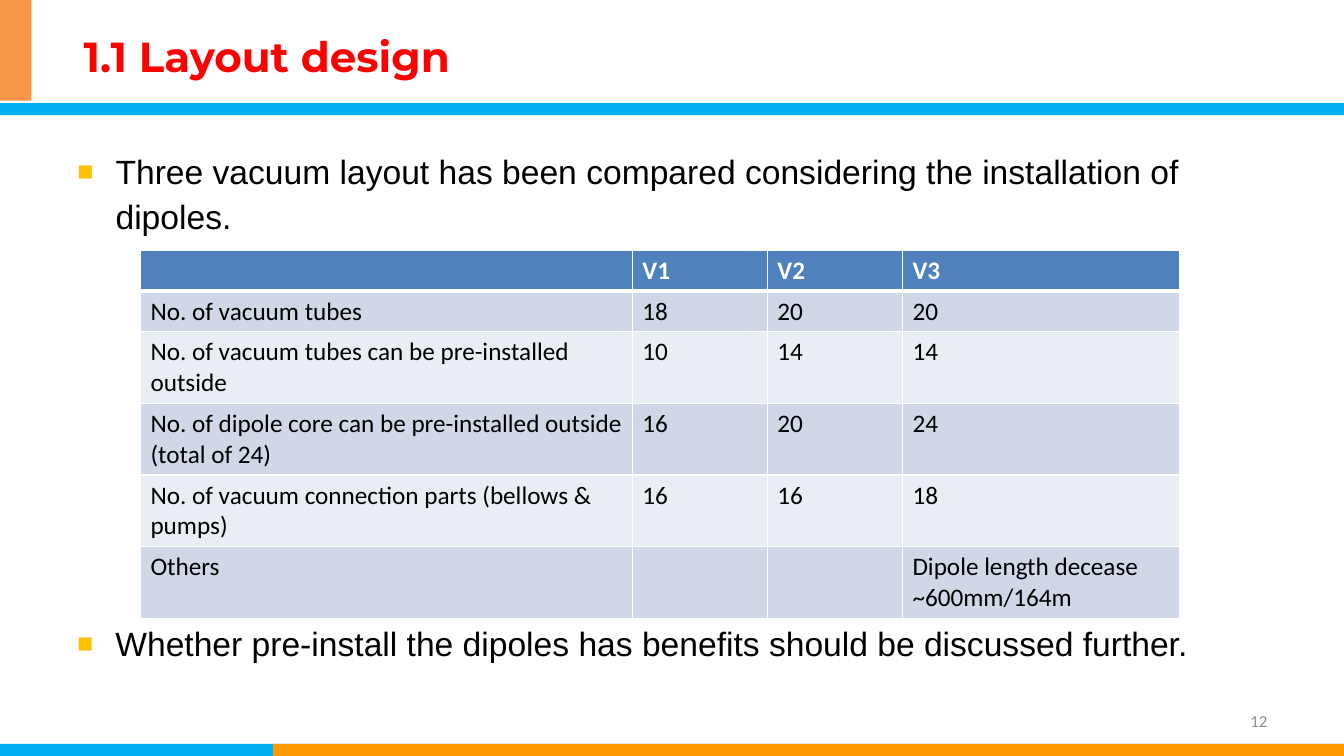
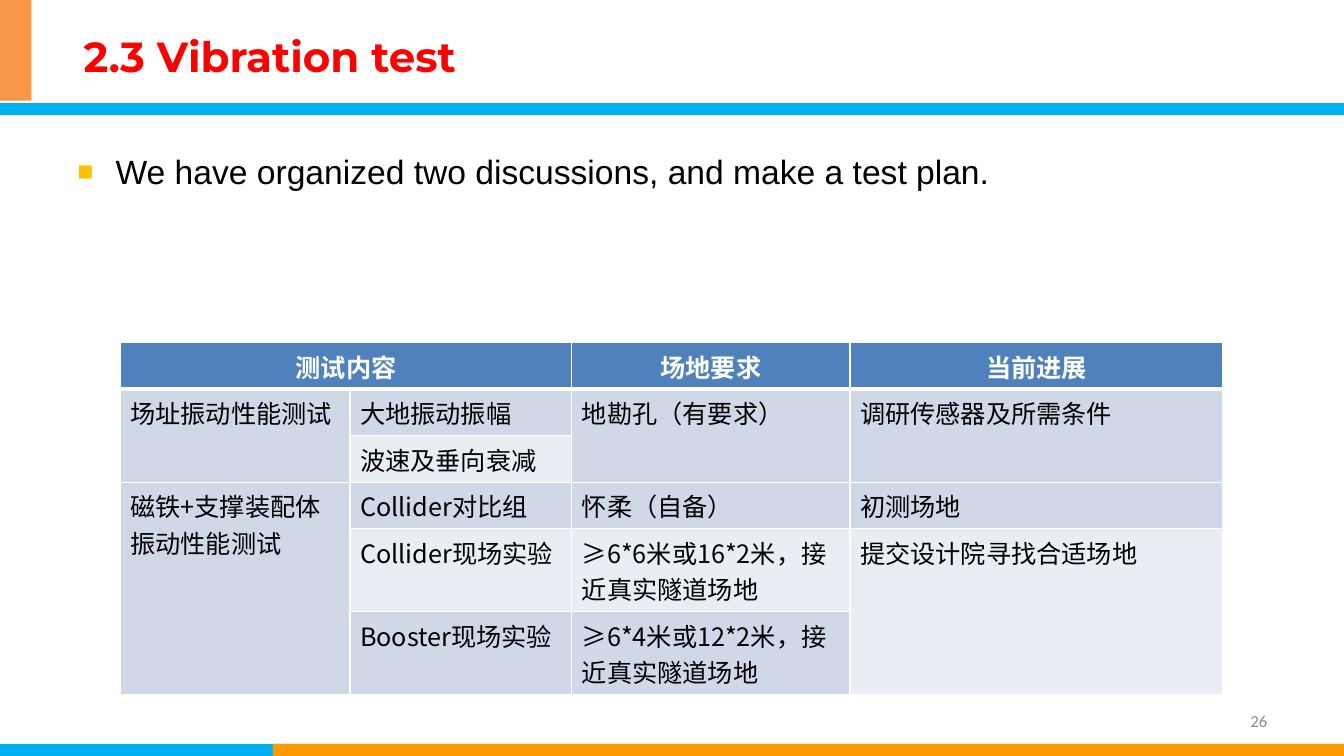
from lxml.etree import SubElement
from pptx import Presentation
from pptx.dml.color import RGBColor
from pptx.enum.shapes import MSO_SHAPE
from pptx.enum.text import MSO_ANCHOR, MSO_AUTO_SIZE, PP_ALIGN
from pptx.oxml.ns import qn
from pptx.util import Inches, Pt

COLORS = {
    "title": "FF0000", "text": "000000", "number": "8C8C8C", "bullet": "FFC000",
    "blue": "00B0F0", "orange": "FF9900", "tab": "F79646",
    "header": "4F81BD", "odd": "D0D8E8", "even": "E9EDF4", "white": "FFFFFF",
}

# Lengths below are percentages of the slide's width and height
BANDS = [
    ("blue", (0, 98.4, 100, 1.6)),
    ("orange", (20.3, 98.4, 79.7, 1.6)),
    ("blue", (0, 13.65, 100, 1.6)),
    ("tab", (0, 0, 2.33, 13.33)),
]
TITLE_BOX = (5.48, 2.13, 88.28, 10.53)
BODY_BOX = (5, 18.8, 88.28, 21.87)
NUMBER_BOX = (71.7, 92.67, 23.33, 5.33)

SLIDES = [
    {
        "title": "1.1 Layout design",
        "number": "12",
        "bullet": "Three vacuum layout has been compared considering the installation of dipoles.",
        "closing": "Whether pre-install the dipoles has benefits should be discussed further.",
        "closing_box": (5, 81.2, 88.28, 16.67),
        "table_corner": (10.45, 33.1),
        "columns": [36.6, 10.05, 10.05, 20.65],
        "row_heights": [5.4] * 2 + [9.47] * 4,
        "font": "Calibri",
        "header_align": PP_ALIGN.LEFT,
        "header_anchor": MSO_ANCHOR.TOP,
        "merges": [],
        "rows": [
            ["", "V1", "V2", "V3"],
            ["No. of vacuum tubes", "18", "20", "20"],
            ["No. of vacuum tubes can be pre-installed outside", "10", "14", "14"],
            ["No. of dipole core can be pre-installed outside (total of 24)", "16", "20", "24"],
            ["No. of vacuum connection parts (bellows & pumps)", "16", "16", "18"],
            ["Others", "", "", "Dipole length decease ~600mm/164m"],
        ],
    },
    {
        "title": "2.3 Vibration test",
        "number": "26",
        "bullet": "We have organized two discussions, and make a test plan.",
        "table_corner": (8.95, 45.35),
        "columns": [17.1, 16.5, 20.7, 27.75],
        "row_heights": [6.15] * 4 + [11] * 2,
        "font": "Noto Sans CJK SC",
        "header_align": PP_ALIGN.CENTER,
        "header_anchor": MSO_ANCHOR.MIDDLE,
        # First row, first column, last row, last column
        "merges": [(0, 0, 0, 1), (1, 0, 2, 0), (1, 2, 2, 2), (1, 3, 2, 3),
                   (3, 0, 5, 0), (4, 3, 5, 3)],
        "rows": [
            ["测试内容", "", "场地要求", "当前进展"],
            ["场址振动性能测试", "大地振动振幅", "地勘孔（有要求）", "调研传感器及所需条件"],
            ["", "波速及垂向衰减", "", ""],
            ["磁铁+支撑装配体振动性能测试", "Collider对比组", "怀柔（自备）", "初测场地"],
            ["", "Collider现场实验", "≥6*6米或16*2米，接近真实隧道场地", "提交设计院寻找合适场地"],
            ["", "Booster现场实验", "≥6*4米或12*2米，接近真实隧道场地", ""],
        ],
    },
]

presentation = Presentation()
presentation.slide_width, presentation.slide_height = Inches(13.33), Inches(7.5)


def share(left, top, width=0, height=0):
    """Turn percentages of the slide into lengths."""
    across, down = presentation.slide_width / 100, presentation.slide_height / 100
    return [round(left * across), round(top * down), round(width * across), round(height * down)]


def add_text(paragraph, text, size, font, color, bold=False, bullet=False):
    """Add one formatted run, with a square bullet if asked for."""
    if bullet:
        paragraph.line_spacing = 1.1
        paragraph.space_before, paragraph.space_after = Pt(0), Pt(10)
        properties = paragraph._p.get_or_add_pPr()
        properties.set("marL", str(Inches(0.38)))
        properties.set("indent", str(-Inches(0.38)))
        bullet_color = SubElement(properties, qn("a:buClr"))
        SubElement(bullet_color, qn("a:srgbClr"), val=COLORS["bullet"])
        SubElement(properties, qn("a:buSzPct"), val="80000")
        SubElement(properties, qn("a:buFont"), typeface="Arial")
        SubElement(properties, qn("a:buChar"), char="■")
    run = paragraph.add_run()
    run.text = text
    run.font.size, run.font.name, run.font.bold = Pt(size), font, bold
    run.font.color.rgb = RGBColor.from_string(COLORS[color])
    east_asian = SubElement(run._r.get_or_add_rPr(), qn("a:ea"))
    east_asian.set("typeface", font)


# Layout: placeholder positions shared by both slides
layout = presentation.slide_layouts[1]
for placeholder, box in zip(layout.placeholders, (TITLE_BOX, BODY_BOX)):
    placeholder.left, placeholder.top, placeholder.width, placeholder.height = share(*box)

for position, content in enumerate(SLIDES):
    slide = presentation.slides.add_slide(layout)

    # Bands are drawn once and moved to the layout
    if position == 0:
        for color, box in BANDS:
            band = slide.shapes.add_shape(MSO_SHAPE.RECTANGLE, *share(*box))
            band.shadow.inherit = False
            band.fill.solid()
            band.fill.fore_color.rgb = RGBColor.from_string(COLORS[color])
            band.line.fill.background()
            layout.shapes.element.append(band.element)

    # Title and bullet
    title_frame = slide.shapes.title.text_frame
    title_frame.vertical_anchor = MSO_ANCHOR.MIDDLE
    title_frame.auto_size = MSO_AUTO_SIZE.NONE
    title_frame.paragraphs[0].alignment = PP_ALIGN.LEFT
    add_text(title_frame.paragraphs[0], content["title"], 30, "Montserrat", "title", bold=True)

    body_frame = slide.placeholders[1].text_frame
    body_frame.auto_size = MSO_AUTO_SIZE.NONE
    add_text(body_frame.paragraphs[0], content["bullet"], 24, "Arial", "text", bullet=True)

    # Page number
    number_frame = slide.shapes.add_textbox(*share(*NUMBER_BOX)).text_frame
    number_frame.word_wrap = True
    number_frame.vertical_anchor = MSO_ANCHOR.MIDDLE
    number_frame.paragraphs[0].alignment = PP_ALIGN.RIGHT
    add_text(number_frame.paragraphs[0], content["number"], 12, "Calibri", "number")

    # Table, with rows tall enough for their lines of text
    rows, columns, row_heights = content["rows"], content["columns"], content["row_heights"]
    table_box = share(*content["table_corner"], sum(columns), sum(row_heights))
    table = slide.shapes.add_table(len(rows), len(columns), *table_box).table
    for column, width in zip(table.columns, columns):
        column.width = share(0, 0, width)[2]
    for row, height in zip(table.rows, row_heights):
        row.height = share(0, 0, 0, height)[3]
    for first_row, first_column, last_row, last_column in content["merges"]:
        table.cell(first_row, first_column).merge(table.cell(last_row, last_column))

    for row_index, texts in enumerate(rows):
        is_header = row_index == 0
        fill = "header" if is_header else ("odd" if row_index % 2 else "even")
        for column_index, text in enumerate(texts):
            cell = table.cell(row_index, column_index)
            # Borders come before the fill in the cell's properties
            for side in ("L", "R", "T", "B"):
                thick = (is_header and side == "B") or (row_index == 1 and side == "T")
                border = SubElement(cell._tc.get_or_add_tcPr(), qn(f"a:ln{side}"),
                                    w=str(Pt(3 if thick else 1)))
                border_fill = SubElement(border, qn("a:solidFill"))
                SubElement(border_fill, qn("a:srgbClr"), val=COLORS["white"])
            cell.fill.solid()
            cell.fill.fore_color.rgb = RGBColor.from_string(COLORS[fill])
            paragraph = cell.text_frame.paragraphs[0]
            if is_header:
                cell.vertical_anchor = content["header_anchor"]
                paragraph.alignment = content["header_align"]
            if text:
                add_text(paragraph, text, 18, content["font"],
                         "white" if is_header else "text", bold=is_header)

    # Closing bullet below the table
    if "closing" in content:
        closing_frame = slide.shapes.add_textbox(*share(*content["closing_box"])).text_frame
        closing_frame.word_wrap = True
        add_text(closing_frame.paragraphs[0], content["closing"], 24, "Arial", "text", bullet=True)

presentation.save("out.pptx")
